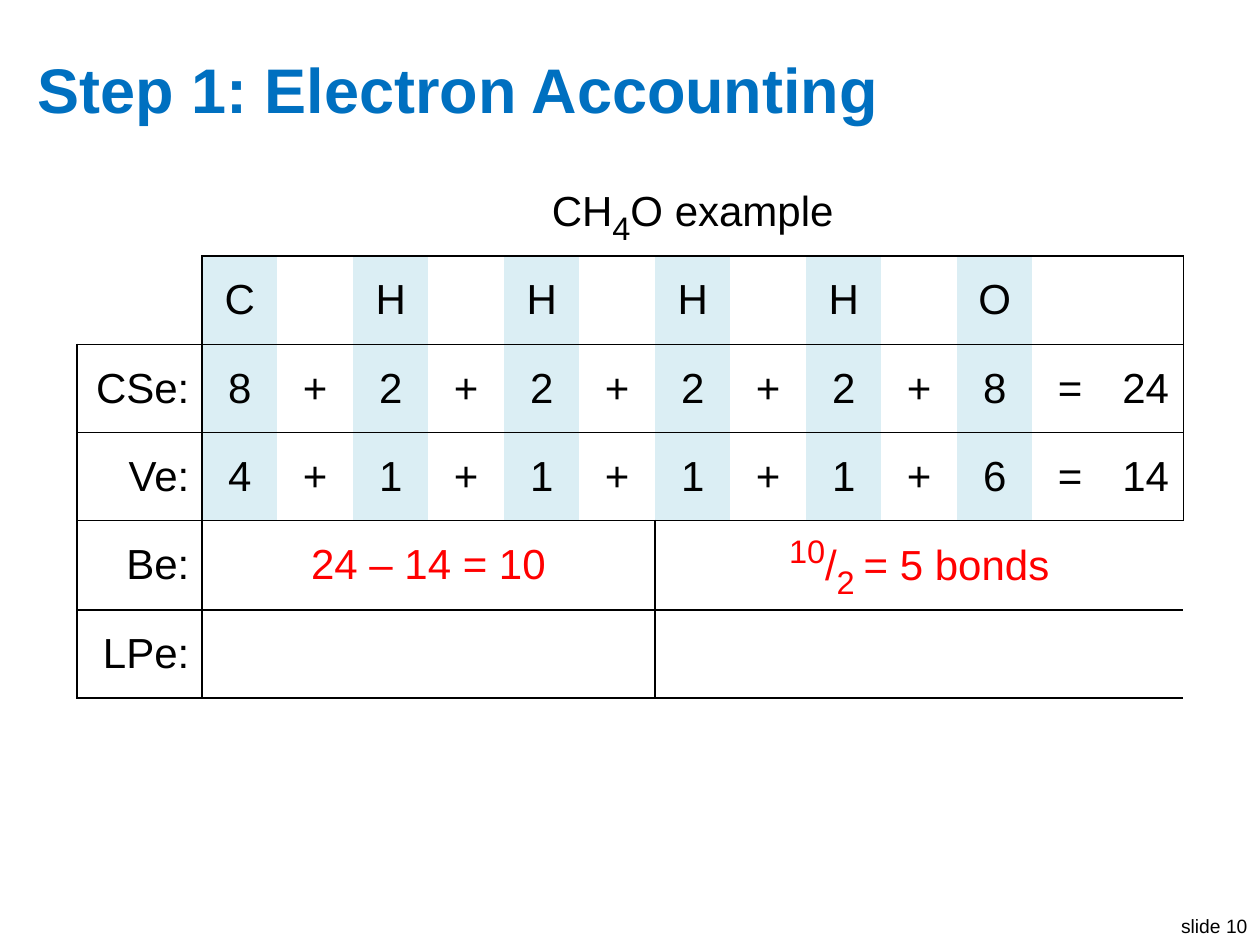
from lxml.etree import SubElement
from pptx import Presentation
from pptx.dml.color import RGBColor as RGB
from pptx.enum.text import MSO_ANCHOR as ANCHOR, MSO_AUTO_SIZE as AUTO, PP_ALIGN as ALIGN
from pptx.oxml.ns import qn
from pptx.util import Emu, Pt

COLORS = {"black": "000000", "white": "FFFFFF", "title": "0070C0",
          "shade": "DBEEF4", "answer": "FF0000"}
SUB, SUPER = -25, 30


def px(n):
    return Emu(round(n * 914400 / 126))


class Deck:
    font = "Arial"
    size = 24

    def __init__(self, width, height):
        self.prs = Presentation()
        self.prs.slide_width, self.prs.slide_height = px(width), px(height)
        self.s = self.prs.slides.add_slide(self.prs.slide_layouts[6])

    def style(self, r, size=None, color="black", bold=False):
        f = r.font
        f.name, f.size, f.bold = self.font, Pt(size or self.size), bold
        f.color.rgb = RGB.from_string(COLORS[color])

    def text(self, x, y, w, h, text, size, color="black", bold=False,
             align=ALIGN.LEFT, anchor=ANCHOR.TOP, wrap=True):
        tf = self.s.shapes.add_textbox(px(x), px(y), px(w), px(h)).text_frame
        tf.word_wrap, tf.vertical_anchor = wrap, anchor
        tf.auto_size = AUTO.NONE if wrap else AUTO.SHAPE_TO_FIT_TEXT
        tf.text = text
        p = tf.paragraphs[0]
        p.alignment = align
        self.style(p.runs[0], size, color, bold)

    def table(self, x, y, w, h, rows, cols, label_w):
        tbl = self.s.shapes.add_table(rows, cols, px(x), px(y), px(w), px(h)).table
        tbl.first_row = tbl.horz_banding = False
        for i, col in enumerate(tbl.columns):
            col.width = px(label_w) if i == 0 else px(w - label_w) // (cols - 1)
        for row in tbl.rows:
            row.height = px(h) // rows
        return tbl

    def cell(self, cell, sides, fill="white"):
        """Line the named sides (a subset of LRTB), clear the others, then fill."""
        tcPr = cell._tc.get_or_add_tcPr()
        for side in "LRTB":
            ln = SubElement(tcPr, qn(f"a:ln{side}"), w=str(Pt(1)))
            if side in sides:
                solid = SubElement(ln, qn("a:solidFill"))
                SubElement(solid, qn("a:srgbClr"), val=COLORS["black"])
            else:
                SubElement(ln, qn("a:noFill"))
        cell.fill.solid()
        cell.fill.fore_color.rgb = RGB.from_string(COLORS[fill])
        cell.vertical_anchor = ANCHOR.MIDDLE

    def cell_text(self, cell, *parts, color="black", align=ALIGN.CENTER):
        """Each part is plain text or a (text, baseline) pair."""
        p = cell.text_frame.paragraphs[0]
        p.alignment = align
        for part in parts:
            text, base = part if isinstance(part, tuple) else (part, 0)
            r = p.add_run()
            r.text = text
            self.style(r, 32 if base else self.size, color)
            if base:
                r._r.get_or_add_rPr().set("baseline", str(base * 1000))


def main():
    deck = Deck(1260, 945)

    # Slide number and title
    deck.text(1166, 908, 94, 37, "slide 10", 11, align=ALIGN.RIGHT, wrap=False)
    deck.text(25, 38, 1210, 101, "Step 1: Electron Accounting", 36, "title",
              bold=True, anchor=ANCHOR.MIDDLE)

    # Table grid: label column, then 13 equal columns
    rows, cols, split = 6, 14, 7
    last = cols - 1
    tbl = deck.table(77, 167, 1107, 529, rows, cols, label_w=125)

    # Borders and fills: atom columns are shaded in the three sum rows
    for i in range(rows):
        for j in range(cols):
            if j == 0:
                sides = ("", "RB")[i] if i < 2 else "LRTB"
            elif i == 0:
                sides = "B"
            else:
                sides = "TB"
                if j == 1 or (i > 3 and j == split):
                    sides += "L"
                if j == last or (i > 3 and j == split - 1):
                    sides += "R"
            shaded = 1 <= i <= 3 and j % 2 and j < last
            deck.cell(tbl.cell(i, j), sides, "shade" if shaded else "white")

    # Merged cells
    tbl.cell(0, 1).merge(tbl.cell(0, last))
    for i in (4, 5):
        tbl.cell(i, 1).merge(tbl.cell(i, split - 1))
        tbl.cell(i, split).merge(tbl.cell(i, last))

    # Heading, atoms and row labels
    deck.cell_text(tbl.cell(0, 1), "CH", ("4", SUB), "O example")
    for k, atom in enumerate("CHHHHO"):
        deck.cell_text(tbl.cell(1, 1 + 2 * k), atom)
    for i, label in enumerate(["CSe:", "Ve:", "Be:", "LPe:"], 2):
        deck.cell_text(tbl.cell(i, 0), label, align=ALIGN.RIGHT)

    # Electron sums
    sums = ["8 + 2 + 2 + 2 + 2 + 8 = 24", "4 + 1 + 1 + 1 + 1 + 6 = 14"]
    for i, line in enumerate(sums, 2):
        for j, token in enumerate(line.split(), 1):
            deck.cell_text(tbl.cell(i, j), token)

    # Bonding electrons
    deck.cell_text(tbl.cell(4, 1), "24 – 14 = 10", color="answer")
    deck.cell_text(tbl.cell(4, split), ("10", SUPER), "/", ("2 ", SUB), "= 5 bonds",
                   color="answer")

    deck.prs.save("out.pptx")


if __name__ == "__main__":
    main()
